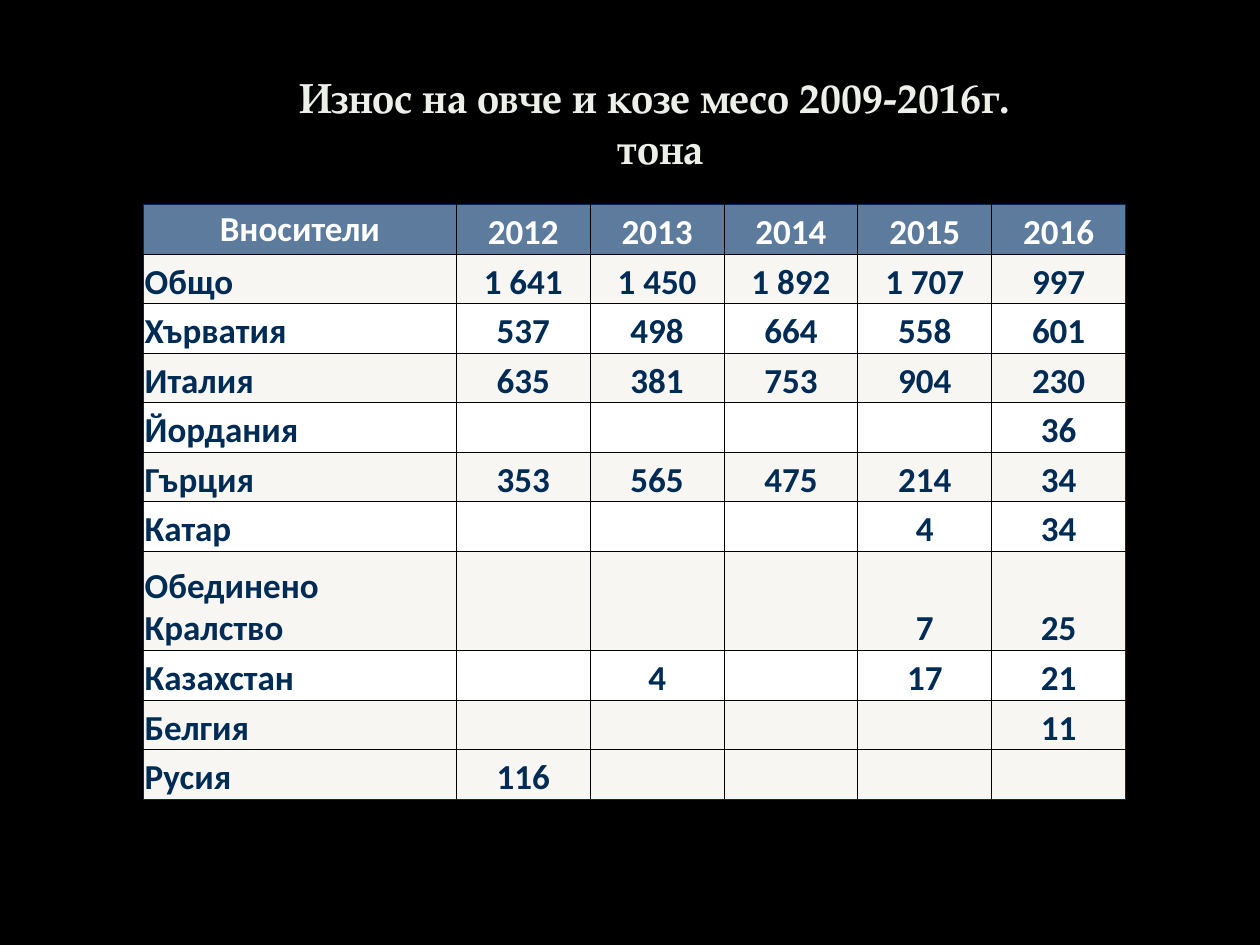
from dataclasses import dataclass

from lxml.etree import SubElement
from pptx import Presentation
from pptx.dml.color import RGBColor
from pptx.enum.text import MSO_ANCHOR, PP_ALIGN
from pptx.oxml.ns import qn
from pptx.util import Pt

HUES = {
    "black": "000000",
    "navy": "002B54",
    "head": "5D7B9D",
    "band": "F7F6F3",
    "white": "FFFFFF",
    "title": "EDF0E9",
}
YEARS = ("2012", "2013", "2014", "2015", "2016")
WIDTHS = (178.8,) + (76.5,) * len(YEARS)
ROW = 28.32


@dataclass
class Trade:
    name: str
    tons: tuple[str, ...]
    fill: str
    lines: int = 1


TRADES = [
    Trade("Общо", ("1 641", "1 450", "1 892", "1 707", "997"), "band"),
    Trade("Хърватия", ("537", "498", "664", "558", "601"), "white"),
    Trade("Италия", ("635", "381", "753", "904", "230"), "band"),
    Trade("Йордания", ("", "", "", "", "36"), "white"),
    Trade("Гърция", ("353", "565", "475", "214", "34"), "band"),
    Trade("Катар", ("", "", "", "4", "34"), "white"),
    Trade("Обединено Кралство", ("", "", "", "7", "25"), "band", 2),
    Trade("Казахстан", ("", "4", "", "17", "21"), "white"),
    Trade("Белгия", ("", "", "", "", "11"), "band"),
    Trade("Русия", ("116", "", "", "", ""), "band"),
]


def color(name: str) -> RGBColor:
    return RGBColor.from_string(HUES[name])


def write(para, text: str, *, font: str = "Calibri", size: float = 20,
          hue: str = "navy", align=PP_ALIGN.CENTER) -> None:
    para.alignment = align
    run = para.add_run()
    run.text = text
    run.font.name = font
    run.font.size = Pt(size)
    run.font.bold = True
    run.font.color.rgb = color(hue)


def edge(cell, side: str, hue: str) -> None:
    props = cell._tc.get_or_add_tcPr()
    line = SubElement(props, qn(f"a:ln{side}"), w=str(Pt(0.5)))
    fill = SubElement(line, qn("a:solidFill"))
    SubElement(fill, qn("a:srgbClr"), val=HUES[hue])


def draw_cell(grid, row: int, col: int, text: str, fill: str) -> None:
    cell = grid.cell(row, col)
    outer = {
        "L": col == 0,
        "R": col == len(WIDTHS) - 1,
        "T": row == 0,
        "B": row == len(TRADES),
    }
    for side, rim in outer.items():
        edge(cell, side, "navy" if rim else "black")
    cell.fill.solid()
    cell.fill.fore_color.rgb = color(fill)
    cell.margin_left = cell.margin_right = cell.margin_top = Pt(0.7)
    cell.margin_bottom = Pt(0)
    corner = row == col == 0
    cell.vertical_anchor = MSO_ANCHOR.MIDDLE if corner else MSO_ANCHOR.BOTTOM
    if text:
        label = row > 0 and col == 0
        write(cell.text_frame.paragraphs[0], text,
              hue="navy" if row else "white",
              align=PP_ALIGN.LEFT if label else PP_ALIGN.CENTER)


def draw_table(slide) -> None:
    rows = [Trade("Вносители", YEARS, "head"), *TRADES]
    high = ROW * sum(item.lines for item in rows)
    frame = slide.shapes.add_table(len(rows), len(WIDTHS), Pt(82), Pt(116.8),
                                   Pt(sum(WIDTHS)), Pt(high))
    grid = frame.table
    grid.first_row = grid.horz_banding = False
    for column, width in zip(grid.columns, WIDTHS):
        column.width = Pt(width)
    for row, item in enumerate(rows):
        grid.rows[row].height = Pt(ROW * item.lines)
        for col, text in enumerate((item.name, *item.tons)):
            draw_cell(grid, row, col, text, item.fill)


def draw_title(slide) -> None:
    box = slide.shapes.add_textbox(Pt(93.6), Pt(37.4), Pt(561.6), Pt(65.5))
    frame = box.text_frame
    frame.word_wrap = True
    look = {"font": "TeX Gyre Pagella", "size": 24, "hue": "title"}
    write(frame.paragraphs[0], "Износ на овче и козе месо 2009-2016г.", **look)
    write(frame.add_paragraph(), " тона", **look)


def main() -> None:
    deck = Presentation()
    deck.slide_width, deck.slide_height = Pt(720), Pt(540)
    slide = deck.slides.add_slide(deck.slide_layouts[6])
    back = slide.background.fill
    back.solid()
    back.fore_color.rgb = color("black")
    draw_table(slide)
    draw_title(slide)
    deck.save("out.pptx")


if __name__ == "__main__":
    main()
